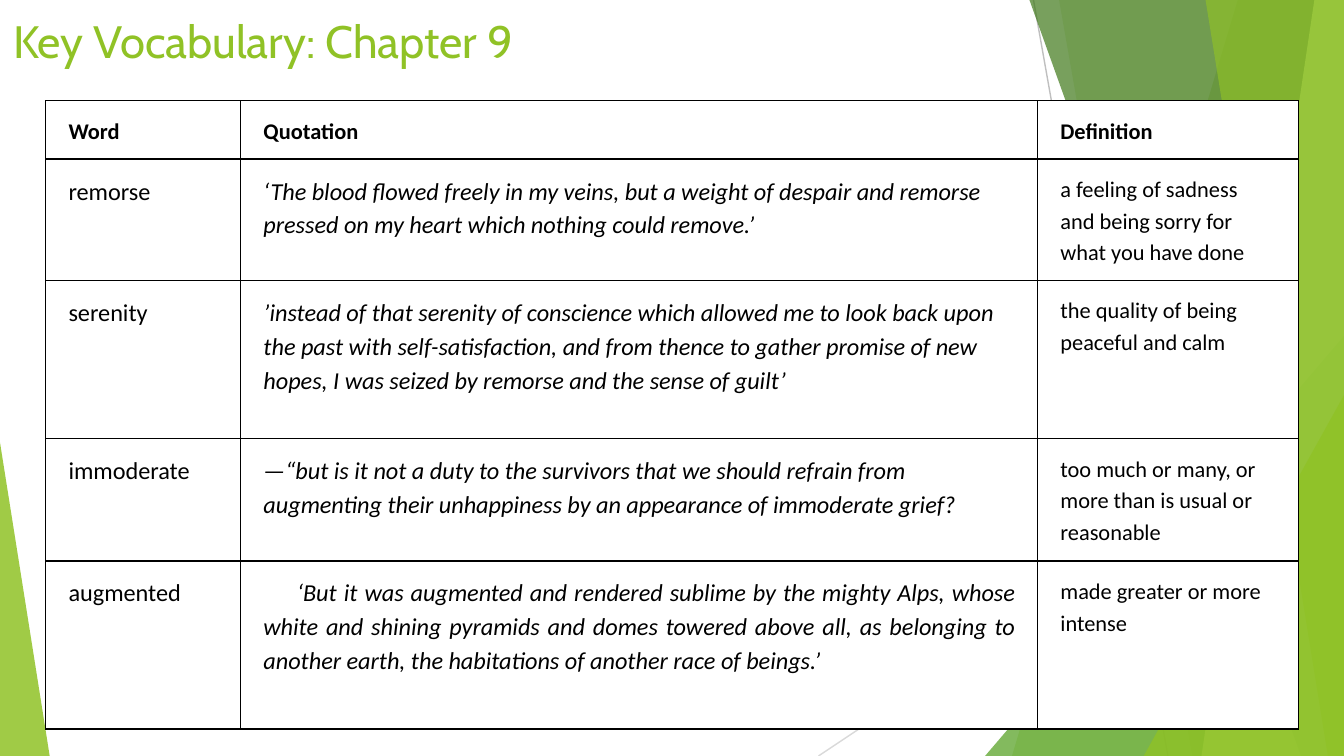
"""Build the Key Vocabulary: Chapter 9 slide."""
import dataclasses
import typing

import lxml.etree
import pptx
import pptx.dml.color
import pptx.enum.shapes
import pptx.enum.text
import pptx.oxml.ns
import pptx.util

Inches = pptx.util.Inches
Point = tuple[float, float]


@dataclasses.dataclass(frozen=True)
class Theme:
    green: str = "90C226"
    mid_green: str = "54A021"
    dark_green: str = "3F7819"
    pale_green: str = "C0E474"
    grey: str = "BFBFBF"
    light_grey: str = "D9D9D9"
    black: str = "000000"
    white: str = "FFFFFF"
    title_font: str = "Cabin"
    body_font: str = "Calibri"
    title_size: float = 24.3
    word_size: float = 13
    small_size: float = 12
    line_width: float = 0.75


@dataclasses.dataclass(frozen=True)
class Ray:
    start: Point
    end: Point
    colour: str


@dataclasses.dataclass(frozen=True)
class Band:
    top_left: float
    bottom_left: float
    colour: str
    opacity: int


@dataclasses.dataclass(frozen=True)
class Triangle:
    left: float
    top: float
    width: float
    apex: float
    colour: str
    opacity: int


@dataclasses.dataclass(frozen=True)
class Entry:
    height: float
    word: str
    quotation: str
    definition: str
    indented: bool = False


THEME = Theme()
WIDTH = 10
HEIGHT = WIDTH * 9 / 16
COLUMN_WIDTHS = (1.45, 5.93, 1.94)
BACKDROP = (
    Ray((7.69, 0), (8.69, HEIGHT), THEME.grey),
    Ray((WIDTH, 3.02), (6.09, HEIGHT), THEME.light_grey),
    Band(9.21, 7.53, THEME.green, 30),
    Band(7.88, 8.87, THEME.green, 20),
    Triangle(7.33, 2.5, 2.67, 1, THEME.mid_green, 72),
    Band(7.66, 9.68, THEME.dark_green, 70),
    Band(9.78, 8.94, THEME.pale_green, 70),
    Band(8.97, 9.88, THEME.green, 65),
    Triangle(8.51, 2.94, 1.49, 1, THEME.green, 80),
    Triangle(0, 3.29, 0.37, 0, THEME.green, 85),
)
ENTRIES = (
    Entry(0.43, "Word", "Quotation", "Definition"),
    Entry(0.9, "remorse",
          "‘The blood flowed freely in my veins, but a weight of despair and remorse "
          "pressed on my heart which nothing could remove.’",
          "a feeling of sadness and being sorry for what you have done"),
    Entry(1.18, "serenity",
          "’instead of that serenity of conscience which allowed me to look back upon "
          "the past with self-satisfaction, and from thence to gather promise of new "
          "hopes, I was seized by remorse and the sense of guilt’",
          "the quality of being peaceful and calm"),
    Entry(0.91, "immoderate",
          "—“but is it not a duty to the survivors that we should refrain from "
          "augmenting their unhappiness by an appearance of immoderate grief?",
          "too much or many, or more than is usual or reasonable"),
    Entry(1.25, "augmented",
          "‘But it was augmented and rendered sublime by the mighty Alps, whose "
          "white and shining pyramids and domes towered above all, as belonging to "
          "another earth, the habitations of another race of beings.’",
          "made greater or more intense", indented=True),
)


def rgb(colour: str) -> pptx.dml.color.RGBColor:
    """Return the colour object of a hex value."""
    return pptx.dml.color.RGBColor.from_string(colour)


def add_element(parent: typing.Any, tag: str, **attributes: str) -> typing.Any:
    """Append an XML element with the given attributes."""
    return lxml.etree.SubElement(parent, pptx.oxml.ns.qn(tag), attributes)


def paint(shape: typing.Any, colour: str, opacity: int) -> None:
    """Give a shape a translucent fill without outline or shadow."""
    shape.shadow.inherit = False
    shape.fill.solid()
    shape.fill.fore_color.rgb = rgb(colour)
    shape.line.fill.background()
    fill = shape.element.spPr.find(pptx.oxml.ns.qn("a:solidFill"))
    add_element(fill[0], "a:alpha", val=str(opacity * 1000))


def draw_ray(slide: typing.Any, ray: Ray) -> None:
    """Draw one thin background line."""
    line = slide.shapes.add_connector(
        pptx.enum.shapes.MSO_CONNECTOR.STRAIGHT,
        *(Inches(value) for value in ray.start + ray.end))
    line.line.color.rgb = rgb(ray.colour)
    line.line.width = pptx.util.Pt(THEME.line_width)
    add_element(line.element.spPr, "a:effectLst")


def draw_band(slide: typing.Any, band: Band) -> None:
    """Draw a full-height band reaching the right edge."""
    builder = slide.shapes.build_freeform(Inches(band.top_left), 0)
    corners = ((WIDTH, 0), (WIDTH, HEIGHT), (band.bottom_left, HEIGHT))
    builder.add_line_segments([(Inches(x), Inches(y)) for x, y in corners], close=True)
    paint(builder.convert_to_shape(), band.colour, band.opacity)


def draw_triangle(slide: typing.Any, triangle: Triangle) -> None:
    """Draw a triangle standing on the bottom edge."""
    shape = slide.shapes.add_shape(
        pptx.enum.shapes.MSO_SHAPE.ISOSCELES_TRIANGLE,
        Inches(triangle.left), Inches(triangle.top),
        Inches(triangle.width), Inches(HEIGHT - triangle.top))
    shape.adjustments[0] = triangle.apex
    paint(shape, triangle.colour, triangle.opacity)


def format_title(slide: typing.Any) -> None:
    """Place and format the title in front of the backdrop."""
    title = slide.shapes.title
    title.element.getparent().append(title.element)
    title.left, title.top = Inches(0), Inches(0)
    title.width, title.height = Inches(9.32), Inches(0.63)
    frame = title.text_frame
    frame.text = "Key Vocabulary: Chapter 9"
    frame.auto_size = pptx.enum.text.MSO_AUTO_SIZE.NONE
    frame.vertical_anchor = pptx.enum.text.MSO_ANCHOR.TOP
    frame.margin_left = frame.margin_right = Inches(0.1)
    frame.margin_top = frame.margin_bottom = Inches(0.1)
    paragraph = frame.paragraphs[0]
    paragraph.alignment = pptx.enum.text.PP_ALIGN.LEFT
    paragraph.font.name = THEME.title_font
    paragraph.font.size = pptx.util.Pt(THEME.title_size)
    paragraph.font.color.rgb = rgb(THEME.green)


def fill_cell(cell: typing.Any, text: str, size: float, bold: bool = False,
              italic: bool = False, indented: bool = False) -> None:
    """Write, border and fill one table cell."""
    cell.text = text
    cell.margin_left = cell.margin_right = Inches(0.1)
    cell.margin_top = cell.margin_bottom = Inches(0.1)
    properties = cell._tc.get_or_add_tcPr()
    for side in "LRTB":
        border = add_element(properties, f"a:ln{side}", w=str(pptx.util.Pt(THEME.line_width)))
        add_element(add_element(border, "a:solidFill"), "a:srgbClr", val=THEME.black)
    cell.fill.solid()
    cell.fill.fore_color.rgb = rgb(THEME.white)
    paragraph = cell.text_frame.paragraphs[0]
    indents = paragraph._p.get_or_add_pPr()
    for side in ("marL", "marR"):
        indents.set(side, str(Inches(0.07)))
    indents.set("indent", str(Inches(0.25 if indented else 0)))
    alignments = pptx.enum.text.PP_ALIGN
    paragraph.alignment = alignments.JUSTIFY if indented else alignments.LEFT
    paragraph.line_spacing = 1.15
    font = paragraph.font
    font.name, font.size = THEME.body_font, pptx.util.Pt(size)
    font.bold, font.italic = bold, italic
    font.color.rgb = rgb(THEME.black)


def draw_vocabulary(slide: typing.Any) -> None:
    """Draw the vocabulary table."""
    height = sum(entry.height for entry in ENTRIES)
    table = slide.shapes.add_table(
        len(ENTRIES), len(COLUMN_WIDTHS), Inches(0.34), Inches(0.75),
        Inches(sum(COLUMN_WIDTHS)), Inches(height)).table
    table.horz_banding = False
    for column, width in zip(table.columns, COLUMN_WIDTHS):
        column.width = Inches(width)
    for index, (row, entry) in enumerate(zip(table.rows, ENTRIES)):
        row.height = Inches(entry.height)
        header = index == 0
        size = THEME.small_size if header else THEME.word_size
        word, quotation, definition = row.cells
        fill_cell(word, entry.word, size, bold=header)
        fill_cell(quotation, entry.quotation, size, header, not header, entry.indented)
        fill_cell(definition, entry.definition, THEME.small_size, bold=header)


def main() -> None:
    """Build and save the presentation."""
    presentation = pptx.Presentation()
    presentation.slide_width, presentation.slide_height = Inches(WIDTH), Inches(HEIGHT)
    slide = presentation.slides.add_slide(presentation.slide_layouts[5])
    painters = {Ray: draw_ray, Band: draw_band, Triangle: draw_triangle}
    for item in BACKDROP:
        painters[type(item)](slide, item)
    format_title(slide)
    draw_vocabulary(slide)
    presentation.save("out.pptx")


if __name__ == "__main__":
    main()
